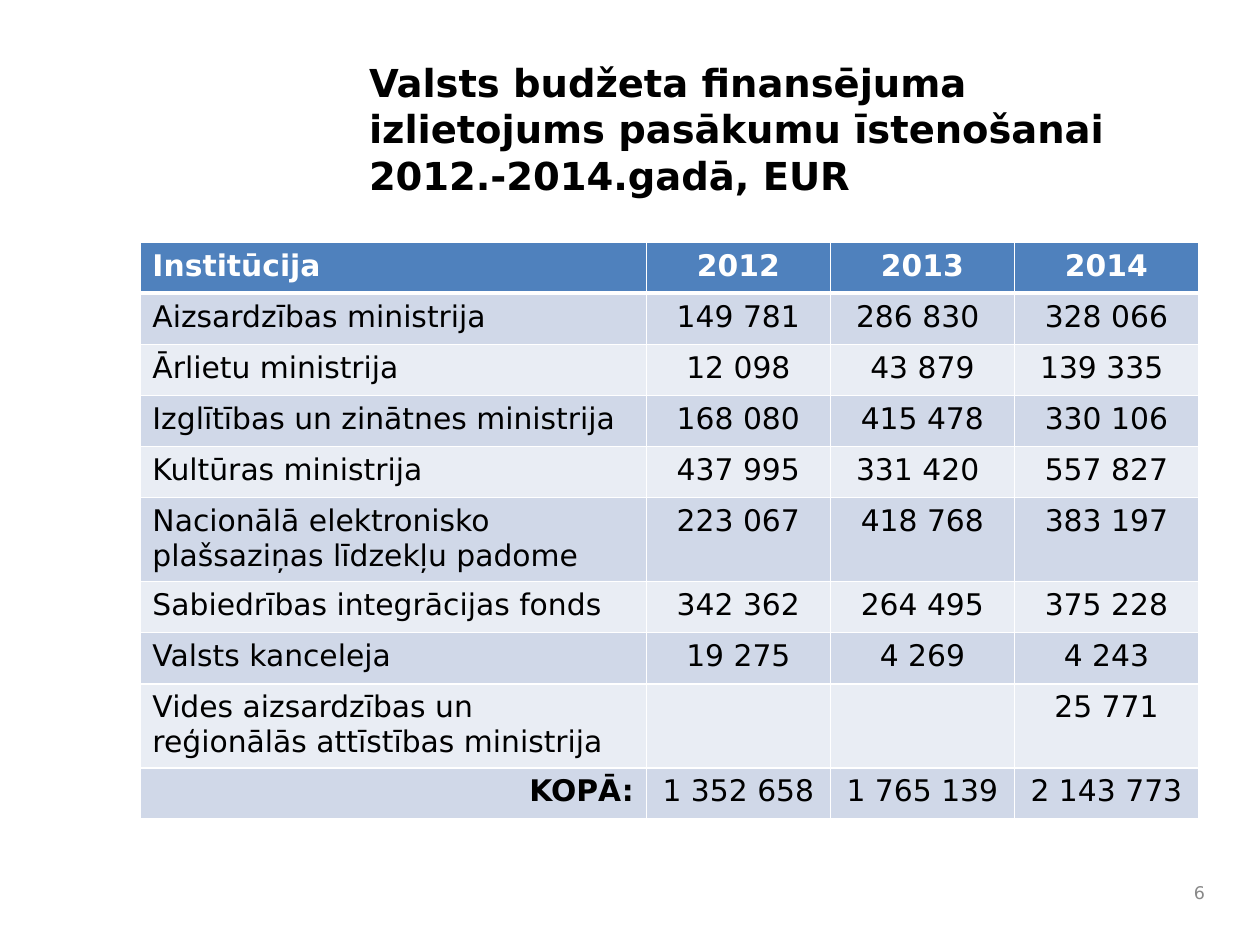
from lxml.etree import SubElement
from pptx import Presentation
from pptx.dml.color import RGBColor
from pptx.enum.text import MSO_ANCHOR, PP_ALIGN
from pptx.oxml.ns import qn
from pptx.util import Cm, Pt

FONT = "DejaVu Sans"
BLACK, WHITE, GREY = "000000", "FFFFFF", "898989"
HEADER_FILL, BAND_FILLS = "4F81BD", ("D0D8E8", "E9EDF4")

TITLE = "Valsts budžeta finansējuma izlietojums pasākumu īstenošanai 2012.-2014.gadā, EUR"
ROWS = [
    ("Institūcija", "2012", "2013", "2014"),
    ("Aizsardzības ministrija", "149 781", "286 830 ", "328 066"),
    ("Ārlietu ministrija", "12 098", "43 879", "139 335 "),
    ("Izglītības un zinātnes ministrija", "168 080", "415 478", "330 106"),
    ("Kultūras ministrija", "437 995", "331 420 ", "557 827"),
    ("Nacionālā elektronisko plašsaziņas līdzekļu padome", "223 067", "418 768", "383 197"),
    ("Sabiedrības integrācijas fonds", "342 362", "264 495", "375 228"),
    ("Valsts kanceleja", "19 275", "4 269", "4 243"),
    ("Vides aizsardzības un reģionālās attīstības ministrija", "", "", "25 771"),
    ("KOPĀ:", "1 352 658", "1 765 139", "2 143 773"),
]
NAME_WIDTH, YEAR_WIDTH = 10.21, 3.71
ROW_HEIGHT, TALL_ROW_HEIGHT = 1.03, 1.65
LONGEST_SINGLE_LINE = 35


def color(value):
    return RGBColor.from_string(value)


def write(text_frame, text, size, text_color, bold=False, alignment=PP_ALIGN.LEFT):
    paragraph = text_frame.paragraphs[0]
    paragraph.alignment = alignment
    paragraph.font.size = Pt(size)
    if not text:
        return
    run = paragraph.add_run()
    run.text = text
    run.font.name = FONT
    run.font.size = Pt(size)
    run.font.bold = bold
    run.font.color.rgb = color(text_color)


def add_text_box(slide, left, top, width, height, anchor, text, size, text_color, **style):
    box = slide.shapes.add_textbox(Cm(left), Cm(top), Cm(width), Cm(height))
    box.text_frame.word_wrap = True
    box.text_frame.vertical_anchor = anchor
    write(box.text_frame, text, size, text_color, **style)


def set_borders(cell, top, bottom):
    """Draw white cell borders; call before the fill, which must follow them in the XML."""
    properties = cell._tc.get_or_add_tcPr()
    for side, width in (("L", 1), ("R", 1), ("T", top), ("B", bottom)):
        line = SubElement(properties, qn(f"a:ln{side}"), w=str(Pt(width)))
        fill = SubElement(line, qn("a:solidFill"))
        SubElement(fill, qn("a:srgbClr"), val=WHITE)


def add_budget_table(slide, left, top):
    columns = [NAME_WIDTH] + [YEAR_WIDTH] * 3
    heights = [TALL_ROW_HEIGHT if len(row[0]) > LONGEST_SINGLE_LINE else ROW_HEIGHT
               for row in ROWS]
    table = slide.shapes.add_table(
        len(ROWS), len(columns), Cm(left), Cm(top), Cm(sum(columns)), Cm(sum(heights))
    ).table
    table.horz_banding = False
    for column, width in zip(table.columns, columns):
        column.width = Cm(width)

    last = len(ROWS) - 1
    for row_index, (values, height) in enumerate(zip(ROWS, heights)):
        table.rows[row_index].height = Cm(height)
        header = row_index == 0
        row_fill = HEADER_FILL if header else BAND_FILLS[(row_index - 1) % 2]
        for column_index, value in enumerate(values):
            cell = table.cell(row_index, column_index)
            set_borders(cell, top=3 if row_index == 1 else 1, bottom=3 if header else 1)
            cell.fill.solid()
            cell.fill.fore_color.rgb = color(row_fill)
            total_label = row_index == last and column_index == 0
            if total_label:
                alignment = PP_ALIGN.RIGHT
            else:
                alignment = PP_ALIGN.CENTER if column_index else PP_ALIGN.LEFT
            write(cell.text_frame, value, 17, WHITE if header else BLACK,
                  bold=header or total_label, alignment=alignment)


def main():
    presentation = Presentation()
    presentation.slide_width, presentation.slide_height = Cm(25.4), Cm(19.05)
    slide = presentation.slides.add_slide(presentation.slide_layouts[6])
    add_text_box(slide, 7.19, 1.07, 16.94, 2.87, MSO_ANCHOR.TOP, TITLE, 22, BLACK, bold=True)
    add_budget_table(slide, 2.82, 4.88)
    add_text_box(slide, 23.7, 17.58, 0.84, 0.84, MSO_ANCHOR.MIDDLE, "6", 10, GREY,
                 alignment=PP_ALIGN.RIGHT)
    presentation.save("out.pptx")


if __name__ == "__main__":
    main()
